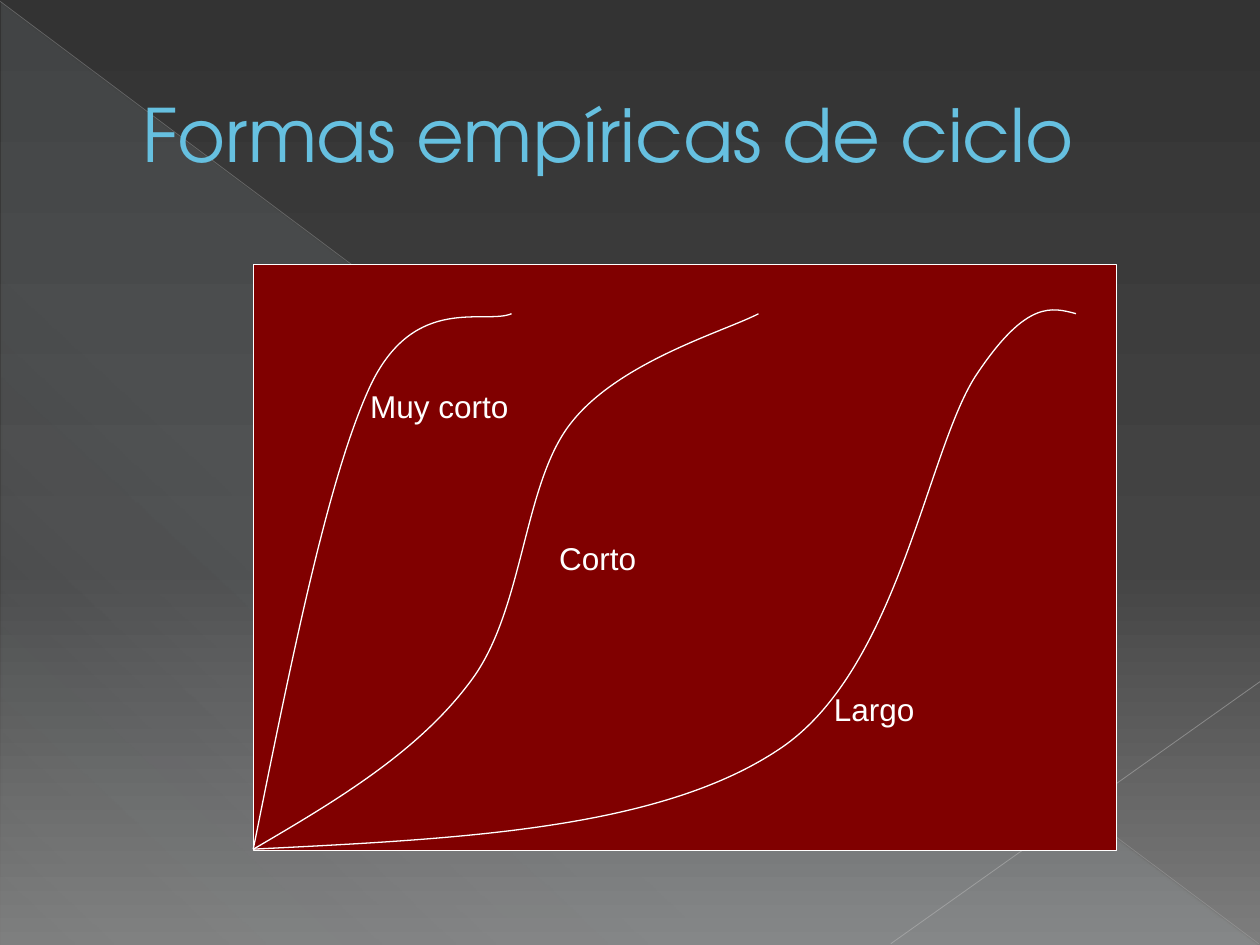
from pptx import Presentation
from pptx.dml.color import RGBColor
from pptx.enum.shapes import MSO_CONNECTOR, MSO_SHAPE
from pptx.enum.text import MSO_ANCHOR, PP_ALIGN
from pptx.oxml.ns import qn
from pptx.util import Inches, Pt
from copy import deepcopy
from lxml import etree

STRAIGHT = MSO_CONNECTOR.STRAIGHT
RECTANGLE = MSO_SHAPE.RECTANGLE
TRIANGLE = MSO_SHAPE.RIGHT_TRIANGLE
MIDDLE = MSO_ANCHOR.MIDDLE
LEFT = PP_ALIGN.LEFT
COLUMNS = 100

deck = Presentation()
deck.slide_width = Inches(10)
deck.slide_height = Inches(7.5)
UNIT = deck.slide_width // COLUMNS
page = deck.slides.add_slide(deck.slide_layouts[6])


def color(value):
    return RGBColor.from_string(value)


def write(para, text, font="Arial", size=18, fill="FFFFFF", indent=0, before=0):
    para.alignment = LEFT
    para.space_before = Pt(before)
    para._p.get_or_add_pPr().set("marL", str(round(indent * UNIT)))
    span = para.add_run()
    span.text = text
    span.font.name = font
    span.font.size = Pt(size)
    span.font.color.rgb = color(fill)
    return span


backdrop = page.background.fill
backdrop_stops = [(0, "333333", 100), (60, "444444", 100), (100, "7D7D7D", 100)]
gradients = [(backdrop, page._element, 90, backdrop_stops)]

triangle = page.shapes.add_shape(
    TRIANGLE, *[round(n * UNIT) for n in (0.1, 0.2, 99.8, 74.8)])
triangle.shadow.inherit = False
triangle.line.fill.background()
triangle_stops = [(0, "DEF5FA", 10), (70, "DEF5FA", 8), (100, "DEF5FA", 1)]
gradients.append((triangle.fill, triangle._element, 133, triangle_stops))

for fill, element, angle, stops in gradients:
    fill.gradient()
    fill.gradient_angle = 360 - angle
    stop_list = next(element.iter(qn("a:gsLst")))
    stop_list.append(deepcopy(stop_list[0]))
    for stop, (position, value, opacity) in zip(fill.gradient_stops, stops):
        stop.position = position / 100
        stop.color.rgb = color(value)
    for tone, (position, value, opacity) in zip(stop_list.iter(qn("a:srgbClr")), stops):
        etree.SubElement(tone, qn("a:alpha"), val=str(opacity * 1000))

for ends, value, width, opacity in [
    ((0, 0.1, 99.9, 74.9), "B9B9B9", 0.39, 35),
    ((100, 54.1, 70.7, 74.9), "C1C1C1", 0.47, 45),
]:
    line = page.shapes.add_connector(STRAIGHT, *[round(n * UNIT) for n in ends])
    line.line.width = Pt(width)
    line.line.color.rgb = color(value)
    tone = next(line._element.iter(qn("a:srgbClr")))
    etree.SubElement(tone, qn("a:alpha"), val=str(opacity * 1000))
    etree.SubElement(line._element.spPr, qn("a:effectLst"))

title = page.shapes.add_textbox(*[round(n * UNIT) for n in (5, 2.9, 90, 15.3)])
title.text_frame.word_wrap = True
title.text_frame.vertical_anchor = MIDDLE
heading = write(title.text_frame.paragraphs[0], "Formas empíricas de ciclo",
                font="TeX Gyre Adventor", size=42, fill="66C0E0", indent=5.3)
outline = etree.Element(qn("a:ln"), w=str(Pt(0.5)))
outline_fill = etree.SubElement(outline, qn("a:solidFill"))
etree.SubElement(outline_fill, qn("a:srgbClr"), val=str(color("1F7084")))
heading.font._element.insert(0, outline)

panel = page.shapes.add_shape(
    RECTANGLE, *[round(n * UNIT) for n in (20.1, 21, 68.5, 46.5)])
panel.shadow.inherit = False
panel.fill.solid()
panel.fill.fore_color.rgb = color("800000")
panel.line.color.rgb = color("FFFFFF")
panel.line.width = Pt(0.75)
frame = panel.text_frame
frame.word_wrap = True
frame.vertical_anchor = MIDDLE
for row, (label, indent) in enumerate(
        [("Muy corto", 8.3), ("Corto", 23.3), ("Largo", 45.1)]):
    para = frame.add_paragraph() if row else frame.paragraphs[0]
    write(para, label, indent=indent, before=64.8 if row else 0)

origin = (20.1, 67.4)
very_short = [
    (23.1, 52.5), (26.1, 37.5), (29.5, 30.4),
    (33, 23.3), (38.5, 25.8), (40.6, 24.9),
]
short = [
    (26.6, 63.6), (33.2, 59.7), (37.4, 54),
    (41.6, 48.4), (41.5, 38.4), (45.3, 33.6),
    (49.1, 28.7), (57.5, 26.3), (60.2, 24.9),
]
long = [
    (36.1, 66.6), (52.2, 65.9), (61.8, 59.5),
    (71.4, 53.2), (73.6, 35.4), (77.6, 29.6),
    (81.5, 23.8), (83.5, 24.4), (85.4, 24.9),
]
for cycle in (very_short, short, long):
    start, *points = [(round(x * UNIT), round(y * UNIT)) for x, y in (origin, *cycle)]
    builder = page.shapes.build_freeform(*start)
    builder.add_line_segments(points, close=False)
    curve = builder.convert_to_shape()
    curve.shadow.inherit = False
    curve.fill.background()
    curve.line.color.rgb = color("FFFFFF")
    curve.line.width = Pt(0.75)
    segments = list(curve._element.iter(qn("a:lnTo")))
    for first in range(0, len(segments), 3):
        bend = etree.Element(qn("a:cubicBezTo"))
        segments[first].addprevious(bend)
        for segment in segments[first:first + 3]:
            bend.append(segment[0])
            segment.getparent().remove(segment)

deck.save("out.pptx")
